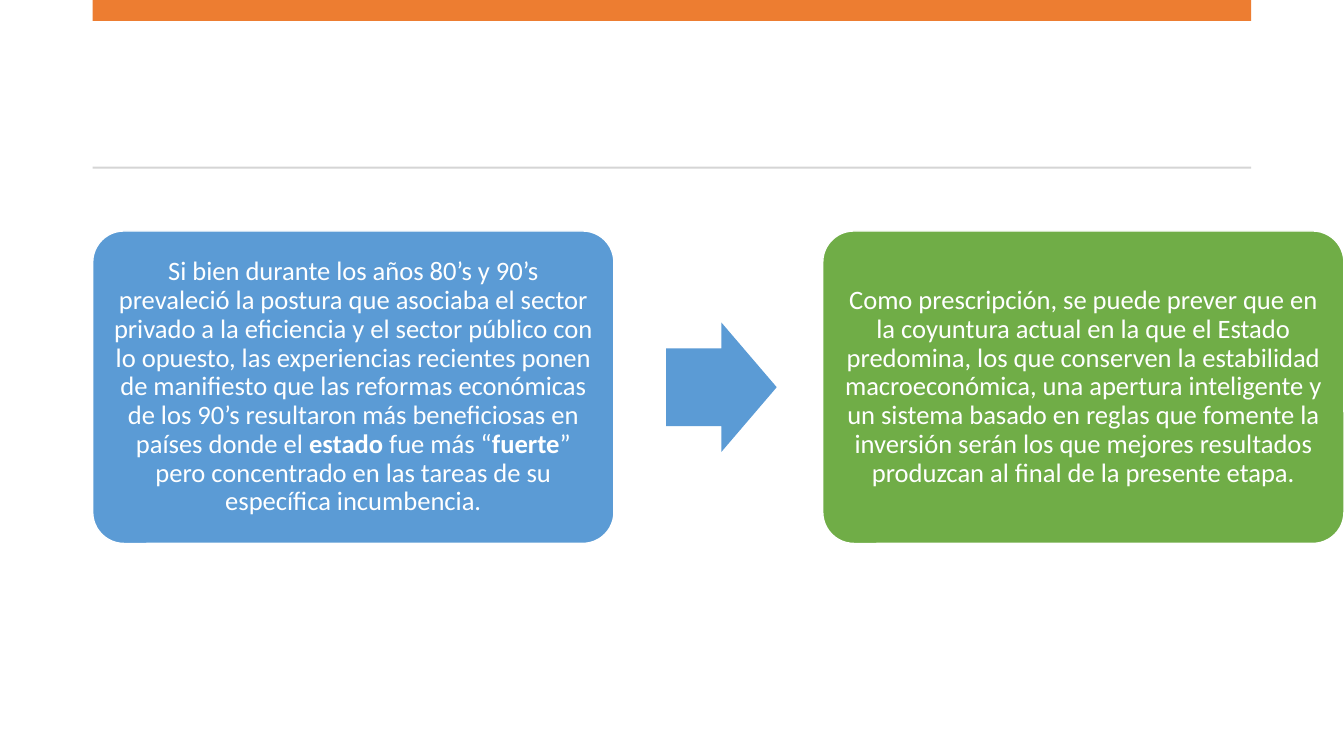
"""Build a slide that leads from a finding to a prescription about the State."""
from pptx import Presentation
from pptx.dml.color import RGBColor
from pptx.enum.shapes import MSO_SHAPE as Shape
from pptx.enum.text import MSO_ANCHOR as Anchor, PP_ALIGN as Align
from pptx.util import Pt

ORANGE = RGBColor(0xED, 0x7D, 0x31)
GREY = RGBColor(0xD5, 0xD5, 0xD5)
BLUE = RGBColor(0x5B, 0x9B, 0xD5)
GREEN = RGBColor(0x70, 0xAD, 0x47)
WHITE = RGBColor(0xFF, 0xFF, 0xFF)

SLIDE_WIDTH, SLIDE_HEIGHT = 960, 540
MARGIN = 66.24
BAND_WIDTH = SLIDE_WIDTH - 2 * MARGIN
CARD_TOP, CARD_WIDTH, CARD_HEIGHT = 165, 372.3, 223.2
ARROW_LEFT, ARROW_WIDTH, ARROW_HEIGHT = 475.8, 79, 92.4

FINDING = [
    ("Si bien durante los años 80’s y 90’s prevaleció la postura que asociaba "
     "el sector privado a la eficiencia y el sector público con lo opuesto, "
     "las experiencias recientes ponen de manifiesto que las reformas "
     "económicas de los 90’s resultaron más beneficiosas en países donde el ", False),
    ("estado", True),
    (" fue más “", False),
    ("fuerte", True),
    ("” pero concentrado en las tareas de su específica incumbencia.", False),
]
PRESCRIPTION = [
    ("Como prescripción, se puede prever que en la coyuntura actual en la que "
     "el Estado predomina, los que conserven la estabilidad macroeconómica, "
     "una apertura inteligente y un sistema basado en reglas que fomente la "
     "inversión serán los que mejores resultados produzcan al final de la "
     "presente etapa.", False),
]


def write_run(paragraph, text, *, font, size, color, bold=False):
    run = paragraph.add_run()
    run.text = text
    run.font.name = font
    run.font.size = Pt(size)
    run.font.bold = bold
    run.font.color.rgb = color


class SlideBuilder:
    font = "Calibri"
    text_size = 19
    text_color = WHITE
    inset = 5.7

    def __init__(self, slide):
        self.slide = slide

    def add_block(self, kind, left, top, width, height, fill):
        shape = self.slide.shapes.add_shape(
            kind, Pt(left), Pt(top), Pt(width), Pt(height))
        shape.shadow.inherit = False
        shape.fill.solid()
        shape.fill.fore_color.rgb = fill
        shape.line.fill.background()
        return shape

    def add_band(self, top, height, fill):
        self.add_block(Shape.RECTANGLE, MARGIN, top, BAND_WIDTH, height, fill)

    def add_arrow(self, left, top, width, height, fill):
        arrow = self.add_block(Shape.RIGHT_ARROW, left, top, width, height, fill)
        arrow.adjustments[0] = 0.6
        arrow.adjustments[1] = 0.5

    def add_card(self, left, fill, passages):
        card = self.add_block(
            Shape.ROUNDED_RECTANGLE, left, CARD_TOP, CARD_WIDTH, CARD_HEIGHT, fill)
        card.adjustments[0] = 0.1
        card.line.color.rgb = WHITE
        card.line.width = Pt(1)
        frame = card.text_frame
        frame.word_wrap = True
        frame.vertical_anchor = Anchor.MIDDLE
        frame.margin_left = frame.margin_right = Pt(self.inset)
        frame.margin_top = frame.margin_bottom = Pt(self.inset)
        paragraph = frame.paragraphs[0]
        paragraph.alignment = Align.CENTER
        paragraph.line_spacing = 0.9
        for text, bold in passages:
            write_run(paragraph, text, font=self.font, size=self.text_size,
                      color=self.text_color, bold=bold)


def main():
    presentation = Presentation()
    presentation.slide_width = Pt(SLIDE_WIDTH)
    presentation.slide_height = Pt(SLIDE_HEIGHT)
    blank_layout = presentation.slide_layouts[6]
    builder = SlideBuilder(presentation.slides.add_slide(blank_layout))

    builder.add_band(0, 15, ORANGE)
    builder.add_band(119, 1.4, GREY)
    builder.add_card(MARGIN, BLUE, FINDING)
    arrow_top = CARD_TOP + (CARD_HEIGHT - ARROW_HEIGHT) / 2
    builder.add_arrow(ARROW_LEFT, arrow_top, ARROW_WIDTH, ARROW_HEIGHT, BLUE)
    builder.add_card(SLIDE_WIDTH - CARD_WIDTH, GREEN, PRESCRIPTION)

    presentation.save("out.pptx")


if __name__ == "__main__":
    main()
